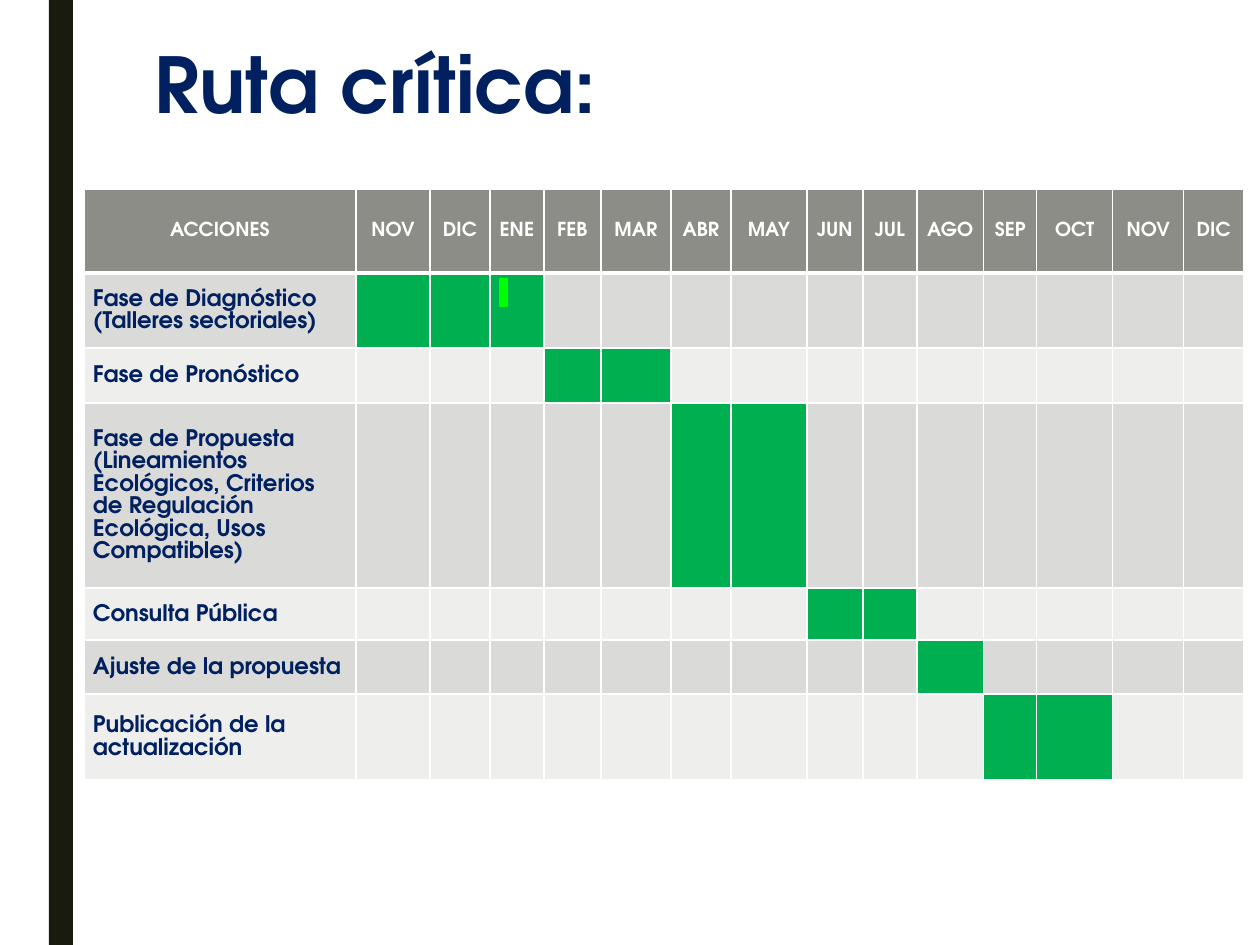
from dataclasses import dataclass

from lxml import etree
from pptx import Presentation
from pptx.dml.color import RGBColor
from pptx.enum import shapes, text
from pptx.oxml import ns
from pptx.util import Emu, Pt

SCALE = 914400 // 126  # EMU per px


@dataclass(frozen=True)
class Theme:
    font: str = "TeX Gyre Adventor"
    navy: str = "002060"
    white: str = "FFFFFF"
    bar: str = "191B0E"
    header: str = "8C8D86"
    bands: tuple = ("DADBD9", "EEEEED")
    active: str = "00B050"
    marker: str = "00FF00"
    title_size: int = 44
    header_size: int = 11
    label_size: int = 13
    marker_size: int = 18


THEME = Theme()

MONTHS = ["NOV", "DIC", "ENE", "FEB", "MAR", "ABR", "MAY", "JUN",
          "JUL", "AGO", "SEP", "OCT", "NOV", "DIC"]
COLUMN_WIDTHS = [272, 74, 60, 54, 57, 70, 60, 76, 56, 54, 67, 53, 76, 71, 60]
HEADER_HEIGHT = 84

# Paragraphs of the label, least row height, first and last active month column
PHASES = [
    (["Fase de Diagnóstico (Talleres sectoriales)"], 75, 1, 3),
    (["Fase de Pronóstico"], 55, 4, 5),
    (["Fase de Propuesta",
      "(Lineamientos Ecológicos, Criterios de Regulación Ecológica, "
      "Usos Compatibles)"], 62, 6, 7),
    (["Consulta Pública"], 52, 8, 9),
    (["Ajuste de la propuesta"], 54, 10, 10),
    (["Publicación de la actualización"], 86, 11, 12),
]


def px(length):
    return Emu(length * SCALE)


def add_span(para, words, size, color):
    span = para.add_run()
    span.text = words
    span.font.name = THEME.font
    span.font.size = Pt(size)
    span.font.bold = True
    span.font.color.rgb = RGBColor.from_string(color)
    return span


def add_color(parent, tag, color):
    holder = etree.SubElement(parent, ns.qn(tag))
    etree.SubElement(holder, ns.qn("a:srgbClr")).set("val", color)


def paint_cell(cell, color, top=1, bottom=1):
    cell.margin_left = cell.margin_right = px(9)
    cell.margin_top = cell.margin_bottom = px(5)
    properties = cell._tc.get_or_add_tcPr()
    for side, width in (("L", 1), ("R", 1), ("T", top), ("B", bottom)):
        line = etree.SubElement(properties, ns.qn(f"a:ln{side}"))
        line.set("w", str(Pt(width)))
        add_color(line, "a:solidFill", THEME.white)
    cell.fill.solid()
    cell.fill.fore_color.rgb = RGBColor.from_string(color)


def write_cell(cell, paragraphs, size, color, align):
    cell.vertical_anchor = text.MSO_ANCHOR.MIDDLE
    frame = cell.text_frame
    for index, words in enumerate(paragraphs):
        para = frame.add_paragraph() if index else frame.paragraphs[0]
        para.alignment = align
        para.line_spacing = 1.07
        add_span(para, words, size, color)


def add_side_bar(page, left, top, width, height):
    bar = page.shapes.add_shape(shapes.MSO_SHAPE.RECTANGLE,
                                px(left), px(top), px(width), px(height))
    bar.shadow.inherit = False
    bar.fill.solid()
    bar.fill.fore_color.rgb = RGBColor.from_string(THEME.bar)
    bar.line.fill.background()


def add_title(page, left, top, width, height):
    box = page.shapes.add_textbox(px(left), px(top), px(width), px(height))
    frame = box.text_frame
    frame.word_wrap = True
    frame.vertical_anchor = text.MSO_ANCHOR.TOP
    para = frame.paragraphs[0]
    para.line_spacing = 0.89
    add_span(para, "Ruta crítica:", THEME.title_size, THEME.navy)


def add_schedule(page, left, top):
    heights = [HEADER_HEIGHT] + [phase[1] for phase in PHASES]
    table = page.shapes.add_table(
        len(heights), len(COLUMN_WIDTHS), px(left), px(top),
        px(sum(COLUMN_WIDTHS)), px(sum(heights))).table
    for column, width in zip(table.columns, COLUMN_WIDTHS):
        column.width = px(width)
    for row, height in zip(table.rows, heights):
        row.height = px(height)

    # Header row
    for column, heading in enumerate(["ACCIONES"] + MONTHS):
        cell = table.cell(0, column)
        write_cell(cell, [heading], THEME.header_size, THEME.white,
                   text.PP_ALIGN.CENTER)
        paint_cell(cell, THEME.header, bottom=3)

    # One row per phase, with its active months in green
    for row, (label, _, first, last) in enumerate(PHASES, start=1):
        write_cell(table.cell(row, 0), label, THEME.label_size, THEME.navy,
                   text.PP_ALIGN.LEFT)
        band = THEME.bands[(row - 1) % 2]
        for column in range(len(COLUMN_WIDTHS)):
            color = THEME.active if first <= column <= last else band
            paint_cell(table.cell(row, column), color, top=3 if row == 1 else 1)

    # Highlighted mark in the last diagnosis month
    para = table.cell(1, PHASES[0][3]).text_frame.paragraphs[0]
    span = add_span(para, " ", THEME.marker_size, THEME.navy)
    properties = span.font._element
    add_color(properties, "a:highlight", THEME.marker)
    properties.find(ns.qn("a:solidFill")).addnext(properties[-1])


def main():
    deck = Presentation()
    deck.slide_width, deck.slide_height = px(1260), px(945)
    page = deck.slides.add_slide(deck.slide_layouts[6])
    add_side_bar(page, 49, 0, 24, 945)
    add_title(page, 142, 42, 993, 204)
    add_schedule(page, 84, 189)
    deck.save("out.pptx")


if __name__ == "__main__":
    main()
